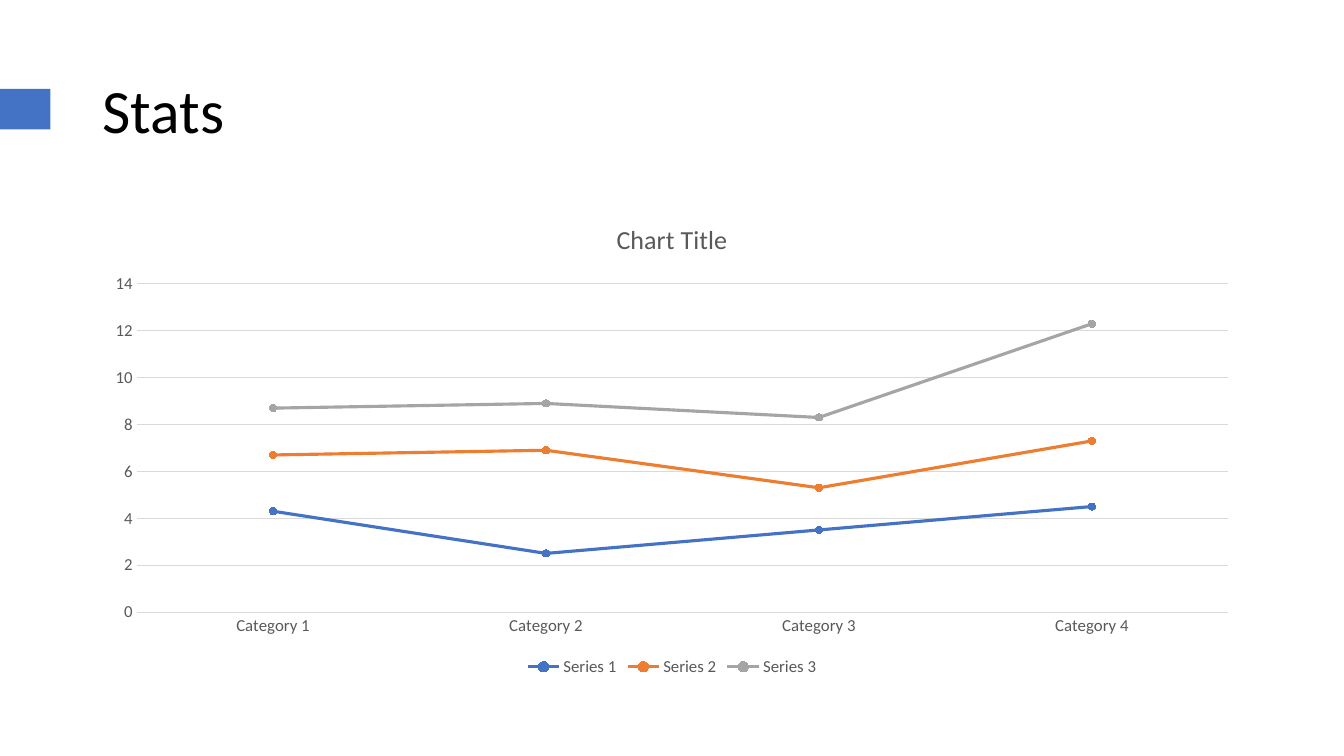
from dataclasses import dataclass

from pptx import Presentation
from pptx.chart.data import CategoryChartData
from pptx.dml.color import RGBColor
from pptx.enum.chart import XL_CHART_TYPE, XL_LEGEND_POSITION, XL_MARKER_STYLE, XL_TICK_MARK
from pptx.enum.shapes import MSO_SHAPE
from pptx.enum.text import MSO_ANCHOR, MSO_AUTO_SIZE, PP_ALIGN
from pptx.util import Pt

TITLE = "Stats"
CHART_TITLE = "Chart Title"
CATEGORIES = ["Category 1", "Category 2", "Category 3", "Category 4"]
SERIES = {
    "Series 1": (4.3, 2.5, 3.5, 4.5),
    "Series 2": (2.4, 4.4, 1.8, 2.8),
    "Series 3": (2, 2, 3, 5),
}

# left, top, width, height in points
SLIDE_SIZE = (960, 540)
ACCENT_BOX = (0, 63.5, 36, 29)
TITLE_BOX = (66, 28.75, 828, 104.4)
CHART_BOX = (66, 143.75, 828, 342.6)


@dataclass(frozen=True)
class Theme:
    font: str = "Calibri"
    title_size: float = 44
    chart_title_size: float = 18.6
    label_size: float = 12
    line_width: float = 2.25
    grid_width: float = 0.75
    marker_size: int = 5
    title: RGBColor = RGBColor(0x00, 0x00, 0x00)
    label: RGBColor = RGBColor(0x59, 0x59, 0x59)
    grid: RGBColor = RGBColor(0xD9, 0xD9, 0xD9)
    accents: tuple = (
        RGBColor(0x44, 0x72, 0xC4),
        RGBColor(0xED, 0x7D, 0x31),
        RGBColor(0xA5, 0xA5, 0xA5),
    )


THEME = Theme()


def in_points(box):
    return [Pt(length) for length in box]


def style_font(font, size, color):
    font.name = THEME.font
    font.size = Pt(size)
    font.bold = False
    font.color.rgb = color


def style_line(line, color, width):
    line.color.rgb = color
    line.width = Pt(width)


def add_accent(slide):
    accent = slide.shapes.add_shape(MSO_SHAPE.RECTANGLE, *in_points(ACCENT_BOX))
    accent.shadow.inherit = False
    accent.fill.solid()
    accent.fill.fore_color.rgb = THEME.accents[0]
    accent.line.fill.background()


def fill_title(slide):
    title = slide.shapes.title
    title.left, title.top, title.width, title.height = in_points(TITLE_BOX)
    frame = title.text_frame
    frame.text = TITLE
    frame.word_wrap = True
    frame.auto_size = MSO_AUTO_SIZE.NONE
    frame.vertical_anchor = MSO_ANCHOR.MIDDLE
    paragraph = frame.paragraphs[0]
    paragraph.alignment = PP_ALIGN.LEFT
    paragraph.line_spacing = 0.9
    style_font(paragraph.font, THEME.title_size, THEME.title)


def style_axes(chart):
    for axis in (chart.category_axis, chart.value_axis):
        axis.major_tick_mark = XL_TICK_MARK.NONE
        axis.minor_tick_mark = XL_TICK_MARK.NONE
        style_font(axis.tick_labels.font, THEME.label_size, THEME.label)
    style_line(chart.category_axis.format.line, THEME.grid, THEME.grid_width)
    value_axis = chart.value_axis
    value_axis.format.line.fill.background()
    value_axis.minimum_scale, value_axis.maximum_scale = 0, 14
    value_axis.major_unit = 2
    value_axis.has_major_gridlines = True
    style_line(value_axis.major_gridlines.format.line, THEME.grid, THEME.grid_width)


def style_series(chart):
    for series, color in zip(chart.plots[0].series, THEME.accents):
        series.smooth = False
        style_line(series.format.line, color, THEME.line_width)
        marker = series.marker
        marker.style = XL_MARKER_STYLE.CIRCLE
        marker.size = THEME.marker_size
        marker.format.fill.solid()
        marker.format.fill.fore_color.rgb = color
        style_line(marker.format.line, color, THEME.grid_width)


def add_stats_chart(slide):
    data = CategoryChartData()
    data.categories = CATEGORIES
    for name, values in SERIES.items():
        data.add_series(name, values)
    chart = slide.shapes.add_chart(
        XL_CHART_TYPE.LINE_MARKERS_STACKED, *in_points(CHART_BOX), data
    ).chart
    style_font(chart.font, THEME.label_size, THEME.label)
    chart.has_title = True
    title_frame = chart.chart_title.text_frame
    title_frame.text = CHART_TITLE
    style_font(title_frame.paragraphs[0].font, THEME.chart_title_size, THEME.label)
    chart.chart_title.include_in_layout = False
    chart.has_legend = True
    chart.legend.position = XL_LEGEND_POSITION.BOTTOM
    chart.legend.include_in_layout = False
    style_font(chart.legend.font, THEME.label_size, THEME.label)
    chart.plots[0].vary_by_categories = False
    style_axes(chart)
    style_series(chart)


def main():
    presentation = Presentation()
    presentation.slide_width, presentation.slide_height = in_points(SLIDE_SIZE)
    title_only = presentation.slide_layouts[5]
    slide = presentation.slides.add_slide(title_only)
    add_accent(slide)
    fill_title(slide)
    add_stats_chart(slide)
    presentation.save("out.pptx")


if __name__ == "__main__":
    main()
